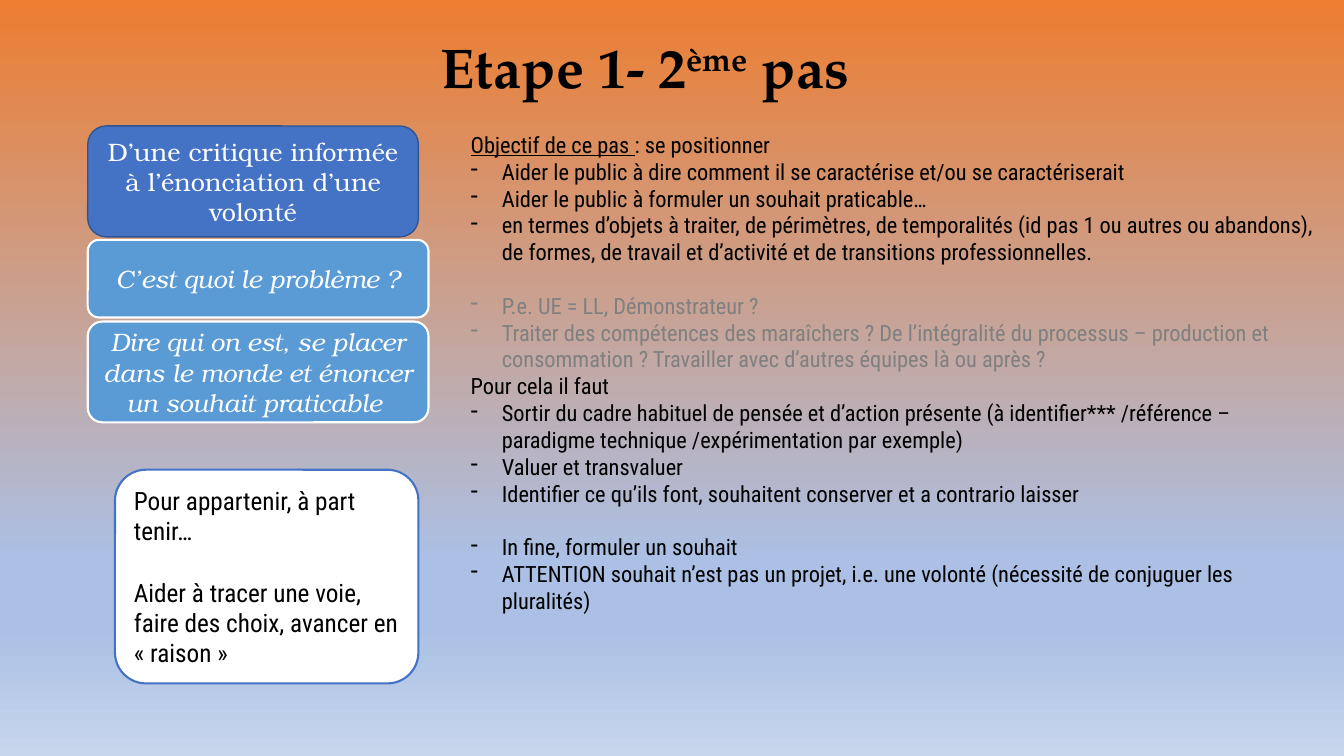
import pptx
import pptx.util
import pptx.dml.color
import pptx.enum.shapes
import pptx.enum.text
import pptx.oxml.ns
from lxml import etree

RGBColor = pptx.dml.color.RGBColor
Pt = pptx.util.Pt
ALIGN = pptx.enum.text.PP_ALIGN
qn = pptx.oxml.ns.qn

PX = 9144  # 100 px to the inch

BLACK = RGBColor(0x00, 0x00, 0x00)
WHITE = RGBColor(0xFF, 0xFF, 0xFF)
GREY = RGBColor(0x80, 0x80, 0x80)
BLUE = RGBColor(0x44, 0x72, 0xC4)
DARK_BLUE = RGBColor(0x32, 0x54, 0x91)
LIGHT_BLUE = RGBColor(0x5B, 0x9B, 0xD5)
ORANGE = RGBColor(0xED, 0x7D, 0x31)
SOFT_ORANGE = RGBColor(0xEA, 0x80, 0x38)
SKY = RGBColor(0xAB, 0xC0, 0xE4)
PALE_SKY = RGBColor(0xC7, 0xD5, 0xED)
BACKGROUND_STOPS = [(0, ORANGE), (3, SOFT_ORANGE), (74, SKY), (83, SKY), (100, PALE_SKY)]

TITLE_FONT = "TeX Gyre Pagella"
STEP_FONT = "TeX Gyre Bonum"
BODY_FONT = "Roboto Condensed"

BLANK_LINE = {16: 19, 18: 22}  # gap in points that stands for one line

GOALS = [
    "Aider le public à dire comment il se caractérise et/ou se caractériserait",
    "Aider le public à formuler un souhait praticable…",
    "en termes d’objets à traiter, de périmètres, de temporalités (id pas 1 ou autres ou "
    "abandons), de formes, de travail et d’activité et de transitions professionnelles.",
]
EXAMPLES = [
    "P.e. UE = LL, Démonstrateur ?",
    "Traiter des compétences des maraîchers ? De l’intégralité du processus – production et "
    "consommation ? Travailler avec d’autres équipes là ou après ?",
]
MEANS = [
    "Sortir du cadre habituel de pensée et d’action présente (à identifier*** /référence – "
    "paradigme technique /expérimentation par exemple)",
    "Valuer et transvaluer",
    "Identifier ce qu’ils font, souhaitent conserver et a contrario laisser",
]
OUTCOMES = [
    "In fine, formuler un souhait",
    "ATTENTION souhait n’est pas un projet, i.e. une volonté (nécessité de conjuguer les pluralités)",
]


def paint_background(slide):
    fill = slide.background.fill
    fill.gradient()
    fill.gradient_angle = 270
    stops = slide.element.find(".//" + qn("a:gsLst"))
    for stop in list(stops):
        stops.remove(stop)
    for percent, color in BACKGROUND_STOPS:
        stop = etree.SubElement(stops, qn("a:gs"), pos=str(percent * 1000))
        etree.SubElement(stop, qn("a:srgbClr"), val=str(color))


def write(frame, *parts, size, font, color=BLACK, bold=False, italic=False,
          align=ALIGN.LEFT, dash=False, gap=False):
    """Add a paragraph; a part is a text or (text, underline, baseline percent)."""
    paragraph = frame.paragraphs[0]
    if paragraph.runs:
        paragraph = frame.add_paragraph()
    paragraph.alignment = align
    if gap:
        paragraph.space_before = Pt(BLANK_LINE[size])
    if dash:
        properties = paragraph._p.get_or_add_pPr()
        properties.set("marL", str(31 * PX))
        properties.set("indent", str(-31 * PX))
        etree.SubElement(properties, qn("a:buFontTx"))
        etree.SubElement(properties, qn("a:buChar"), char="-")
    for part in parts:
        words, underline, baseline = (part, False, 0) if isinstance(part, str) else part
        run = paragraph.add_run()
        run.text = words
        run.font.size = Pt(size)
        run.font.name = font
        run.font.color.rgb = color
        run.font.bold = bold
        run.font.italic = italic
        run.font.underline = underline
        if baseline:
            run.font._element.set("baseline", str(baseline * 1000))


def add_text(slide, left, top, width, height):
    frame = slide.shapes.add_textbox(left * PX, top * PX, width * PX, height * PX).text_frame
    frame.word_wrap = True
    frame.auto_size = pptx.enum.text.MSO_AUTO_SIZE.SHAPE_TO_FIT_TEXT
    return frame


def add_card(slide, left, top, width, height, fill, line, line_width=1.5, rounding=0.145):
    card = slide.shapes.add_shape(pptx.enum.shapes.MSO_SHAPE.ROUNDED_RECTANGLE,
                                  left * PX, top * PX, width * PX, height * PX)
    card.adjustments[0] = rounding
    card.shadow.inherit = False
    card.fill.solid()
    card.fill.fore_color.rgb = fill
    card.line.color.rgb = line
    card.line.width = Pt(line_width)
    card.text_frame.word_wrap = True
    card.text_frame.vertical_anchor = pptx.enum.text.MSO_ANCHOR.MIDDLE
    return card.text_frame


def add_dashes(frame, items, color=BLACK, gap=False):
    for index, item in enumerate(items):
        write(frame, item, size=16, font=BODY_FONT, color=color, dash=True,
              gap=gap and index == 0)


def main():
    deck = pptx.Presentation()
    deck.slide_width = pptx.util.Inches(13.33)
    deck.slide_height = pptx.util.Inches(7.5)
    slide = deck.slides.add_slide(deck.slide_layouts[6])
    paint_background(slide)

    # Title
    title = add_text(slide, 27, 27, 1225, 77)
    write(title, "Etape 1- 2", ("ème", False, 30), " pas", size=40, font=TITLE_FONT,
          bold=True, align=ALIGN.CENTER)

    # Steps on the left
    step_format = {"size": 18, "font": STEP_FONT, "color": WHITE, "align": ALIGN.CENTER}
    theme = add_card(slide, 87, 125, 328, 110, BLUE, DARK_BLUE, 1, 0.167)
    write(theme, "D’une critique informée à l’énonciation d’une volonté", **step_format)
    for top, height, question in [
        (238, 77, "C’est quoi le problème ?"),
        (319, 100, "Dire qui on est, se placer dans le monde et énoncer un souhait praticable "),
    ]:
        step = add_card(slide, 87, top, 338, height, LIGHT_BLUE, WHITE)
        write(step, question, italic=True, **step_format)

    # Purpose card
    purpose = add_card(slide, 114, 466, 301, 212, WHITE, BLUE)
    write(purpose, "Pour appartenir, à part tenir…", size=18, font=BODY_FONT)
    write(purpose, "Aider à tracer une voie, faire des choix, avancer en « raison »",
          size=18, font=BODY_FONT, gap=True)

    # Objective and method
    objective = add_text(slide, 457, 125, 864, 522)
    write(objective, ("Objectif de ce pas ", True, 0), ": se positionner", size=16, font=BODY_FONT)
    add_dashes(objective, GOALS)
    add_dashes(objective, EXAMPLES, color=GREY, gap=True)
    write(objective, "Pour cela il faut", size=16, font=BODY_FONT)
    add_dashes(objective, MEANS)
    add_dashes(objective, OUTCOMES, gap=True)

    deck.save("out.pptx")


if __name__ == "__main__":
    main()
